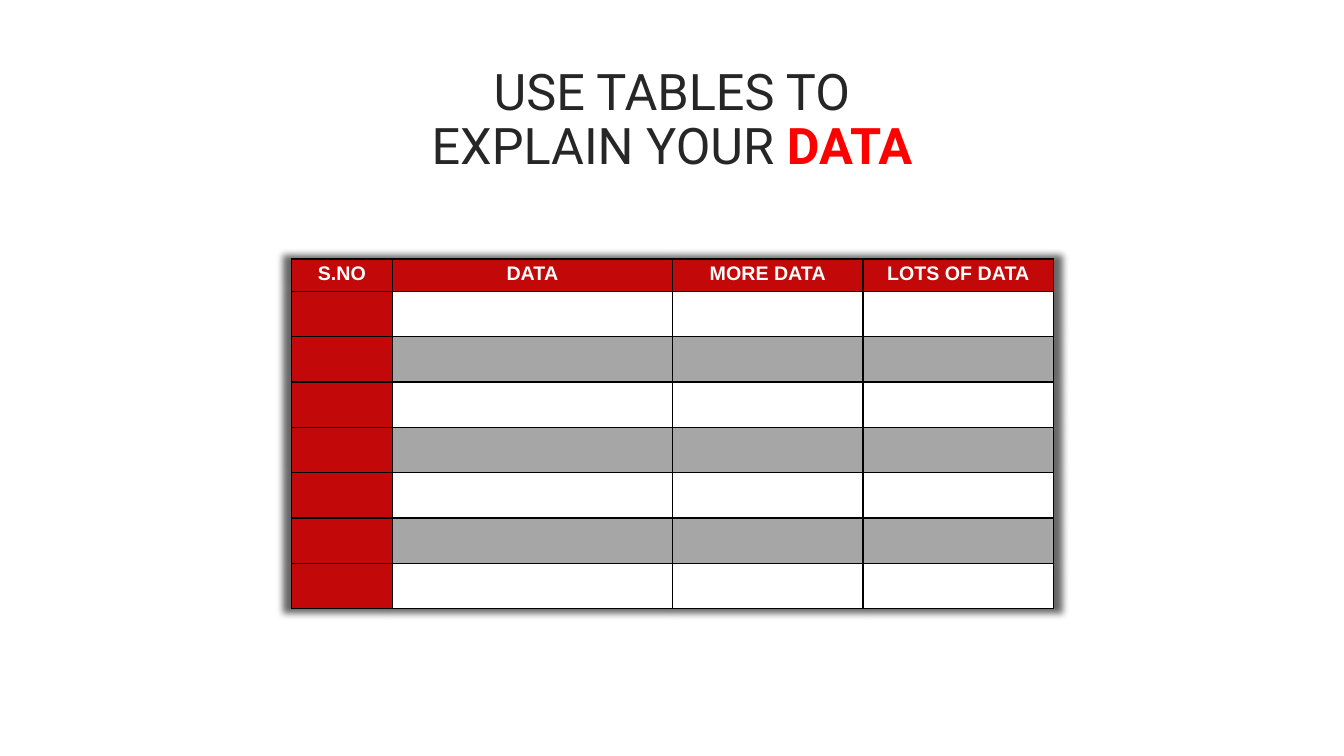
from lxml import etree
from pptx import Presentation
from pptx import util as u
from pptx.dml.color import RGBColor
from pptx.enum import text
from pptx.oxml import ns

INK = RGBColor(0x26, 0x26, 0x26)
ACCENT = RGBColor(0xFF, 0x00, 0x00)
RED = RGBColor(0xC2, 0x08, 0x08)
GREY = RGBColor(0xA6, 0xA6, 0xA6)
WHITE = RGBColor(0xFF, 0xFF, 0xFF)
BLACK = RGBColor(0x00, 0x00, 0x00)

SLIDE_WIDTH, SLIDE_HEIGHT = u.Inches(13.33), u.Inches(7.5)
HEADINGS = ["S.NO", "DATA", "MORE DATA", "LOTS OF DATA"]
COLUMN_WIDTHS = [1, 2.78, 1.89, 1.89]
HEADER_HEIGHT, ROW_HEIGHT, DATA_ROWS = 0.32, 0.45, 7

TITLE_FORMAT = {"size": u.Pt(36), "name": "Roboto"}
HEADING_FORMAT = {"size": u.Pt(14), "name": "Arial", "bold": True}
TITLE_FRAME = {"word_wrap": True, "vertical_anchor": text.MSO_ANCHOR.BOTTOM,
               "margin_left": u.Inches(0.1), "margin_right": u.Inches(0.1),
               "margin_top": u.Inches(0.1), "margin_bottom": u.Inches(0.1)}
CELL_MARGINS = {"margin_left": u.Inches(0.08), "margin_right": u.Inches(0.08),
                "margin_top": u.Inches(0.04), "margin_bottom": u.Inches(0.04)}


def apply(target, values):
    for key, value in values.items():
        setattr(target, key, value)


def add_words(paragraph, words, style, color):
    run = paragraph.add_run()
    run.text = words
    apply(run.font, style)
    run.font.color.rgb = color


def add_title(slide, plain, strong):
    width, height = u.Inches(5.67), u.Inches(1.32)
    title = slide.shapes.add_textbox((SLIDE_WIDTH - width) // 2, u.Inches(0.52),
                                     width, height)
    apply(title.text_frame, TITLE_FRAME)
    line = title.text_frame.paragraphs[0]
    apply(line, {"alignment": text.PP_ALIGN.CENTER, "line_spacing": 0.9})
    add_words(line, plain, TITLE_FORMAT, INK)
    add_words(line, strong, {**TITLE_FORMAT, "bold": True}, ACCENT)


def add_borders(cell):
    properties = cell._tc.get_or_add_tcPr()
    for place, side in enumerate("LRTB"):
        properties.insert(place, etree.fromstring(
            f'<a:ln{side} {ns.nsdecls("a")} w="{u.Pt(1)}"><a:solidFill>'
            f'<a:srgbClr val="{BLACK}"/></a:solidFill></a:ln{side}>'))


def add_table_shadow(table):
    table._tbl.tblPr.insert(0, etree.fromstring(
        f'<a:effectLst {ns.nsdecls("a")}><a:outerShdw blurRad="63500" '
        'sx="102000" sy="102000" algn="ctr" rotWithShape="0">'
        f'<a:srgbClr val="{BLACK}"><a:alpha val="60000"/></a:srgbClr>'
        '</a:outerShdw></a:effectLst>'))


def cell_color(row, column):
    if row == 0 or column == 0:
        return RED
    return WHITE if row % 2 else GREY


def add_data_table(slide):
    heights = [HEADER_HEIGHT] + [ROW_HEIGHT] * DATA_ROWS
    table = slide.shapes.add_table(
        len(heights), len(HEADINGS), u.Inches(2.89), u.Inches(2.57),
        u.Inches(sum(COLUMN_WIDTHS)), u.Inches(sum(heights))).table
    for column, width in zip(table.columns, COLUMN_WIDTHS):
        column.width = u.Inches(width)
    for row, height in zip(table.rows, heights):
        row.height = u.Inches(height)

    # Fills and borders
    for r in range(len(heights)):
        for c in range(len(HEADINGS)):
            cell = table.cell(r, c)
            apply(cell, CELL_MARGINS)
            cell.fill.solid()
            cell.fill.fore_color.rgb = cell_color(r, c)
            add_borders(cell)

    # Column headings
    for c, heading in enumerate(HEADINGS):
        line = table.cell(0, c).text_frame.paragraphs[0]
        line.alignment = text.PP_ALIGN.CENTER
        add_words(line, heading, HEADING_FORMAT, WHITE)
    add_table_shadow(table)


def main():
    deck = Presentation()
    apply(deck, {"slide_width": SLIDE_WIDTH, "slide_height": SLIDE_HEIGHT})
    slide = deck.slides.add_slide(deck.slide_layouts[6])
    add_title(slide, "USE TABLES TO EXPLAIN YOUR ", "DATA")
    add_data_table(slide)
    deck.save("out.pptx")


if __name__ == "__main__":
    main()
